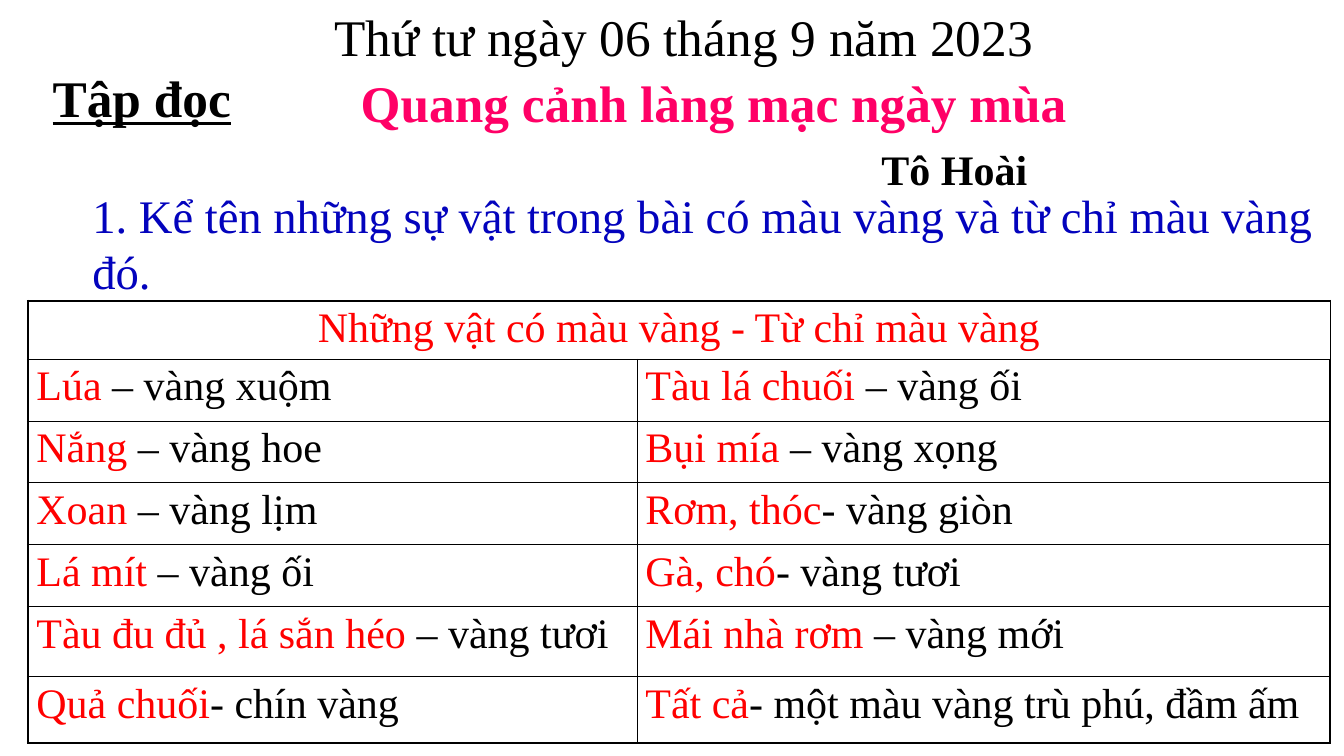
from dataclasses import dataclass

from lxml.etree import SubElement
from pptx import Presentation
from pptx.dml.color import RGBColor as RGB
from pptx.enum.text import MSO_ANCHOR as ANCHOR, MSO_AUTO_SIZE as FIT, PP_ALIGN as ALIGN
from pptx.oxml.ns import qn
from pptx.util import Pt


@dataclass(frozen=True)
class Theme:
    font: str = "Times New Roman"
    black: RGB = RGB(0, 0, 0)
    pink: RGB = RGB(0xFF, 0, 0x66)
    blue: RGB = RGB(0x03, 0x03, 0xBD)
    red: RGB = RGB(0xFF, 0, 0)
    heading: int = 44
    question: int = 40
    body: int = 36
    outer: float = 2.25
    inner: float = 1


class Deck:
    """Draws styled elements on the current slide."""

    def __init__(self, theme, width, height):
        self.theme = theme
        self.prs = Presentation()
        self.prs.slide_width, self.prs.slide_height = Pt(width), Pt(height)
        self.s = self.prs.slides.add_slide(self.prs.slide_layouts[5])

    def style(self, p, size, color, align=ALIGN.LEFT, bold=False, underline=False):
        p.alignment = align
        f = p.font
        f.name, f.size, f.bold, f.underline = self.theme.font, Pt(size), bold, underline
        f.color.rgb = color

    def fill_text(self, sp, lines):
        tf = sp.text_frame
        tf.word_wrap, tf.auto_size, tf.vertical_anchor = True, FIT.NONE, ANCHOR.TOP
        tf.margin_left = tf.margin_right = Pt(8.64)
        tf.margin_top = tf.margin_bottom = Pt(4.32)
        tf.text = "\n".join(text for text, _ in lines)
        for p, (_, look) in zip(tf.paragraphs, lines):
            self.style(p, **look)

    def title(self, box, text, **look):
        sp = self.s.shapes.title
        sp.left, sp.top, sp.width, sp.height = map(Pt, box)
        self.fill_text(sp, [(text, look)])

    def text(self, box, *lines):
        self.fill_text(self.s.shapes.add_textbox(*map(Pt, box)), lines)

    def borders(self, cell, widths):
        tc_pr = cell._tc.get_or_add_tcPr()
        for i, (side, width) in enumerate(widths.items()):
            ln = tc_pr.makeelement(qn(f"a:{side}"), {"w": str(Pt(width))})
            fill = SubElement(ln, qn("a:solidFill"))
            SubElement(fill, qn("a:srgbClr"), val=str(self.theme.black))
            tc_pr.insert(i, ln)

    def table(self, left, top, widths, heights, header, rows):
        t = self.theme
        n_rows, n_cols = len(heights), len(widths)
        tbl = self.s.shapes.add_table(
            n_rows, n_cols, Pt(left), Pt(top), Pt(sum(widths)), Pt(sum(heights))).table
        tbl.first_row = tbl.horz_banding = False
        for col, width in zip(tbl.columns, widths):
            col.width = Pt(width)
        for row, height in zip(tbl.rows, heights):
            row.height = Pt(height)
        for r in range(n_rows):
            for c in range(n_cols):
                cell = tbl.cell(r, c)
                cell.fill.background()
                edges = {"lnL": c == 0, "lnR": c == n_cols - 1,
                         "lnT": r == 0, "lnB": r == n_rows - 1}
                self.borders(cell, {k: t.outer if e else t.inner for k, e in edges.items()})
        head = tbl.cell(0, 0)
        head.merge(tbl.cell(0, n_cols - 1))
        head.text = header
        self.style(head.text_frame.paragraphs[0], t.body, t.red, ALIGN.CENTER)
        for r, pairs in enumerate(rows, 1):
            for c, (thing, shade) in enumerate(pairs):
                p = tbl.cell(r, c).text_frame.paragraphs[0]
                self.style(p, t.body, t.black)
                run = p.add_run()
                run.text, run.font.color.rgb = thing, t.red
                p.add_run().text = shade


YELLOW_THINGS = [
    [("Lúa", " – vàng xuộm"), ("Tàu lá chuối", " – vàng ối")],
    [("Nắng", " – vàng hoe"), ("Bụi mía", " – vàng xọng")],
    [("Xoan", " – vàng lịm"), ("Rơm, thóc", "- vàng giòn")],
    [("Lá mít", " – vàng ối"), ("Gà, chó", "- vàng tươi")],
    [("Tàu đu đủ , lá sắn héo", " – vàng tươi"), ("Mái nhà rơm", " – vàng mới")],
    [("Quả chuối", "- chín vàng"), ("Tất cả", "- một màu vàng trù phú, đầm ấm")],
]


def main():
    t = Theme()
    deck = Deck(t, 1152, 648)
    deck.title((276, 57, 672, 62), "Quang cảnh làng mạc ngày mùa",
               size=t.heading, color=t.pink, align=ALIGN.CENTER, bold=True)
    deck.text((668, 119, 300, 52),
              ("Tô Hoài", dict(size=t.body, color=t.black, align=ALIGN.CENTER, bold=True)))
    deck.text((70.5, 156, 1065, 104),
              ("1. Kể tên những sự vật trong bài có màu vàng và từ chỉ màu vàng đó.",
               dict(size=t.question, color=t.blue)))
    deck.table(24, 258, [522, 594], [50, 53, 53, 53, 53, 60, 57],
               "Những vật có màu vàng - Từ chỉ màu vàng", YELLOW_THINGS)
    deck.text((36.5, 0, 1100, 115),
              ("Thứ tư ngày 06 tháng 9 năm 2023",
               dict(size=t.heading, color=t.black, align=ALIGN.CENTER)),
              ("Tập đọc", dict(size=t.heading, color=t.black, bold=True, underline=True)))
    deck.prs.save("out.pptx")


if __name__ == "__main__":
    main()
